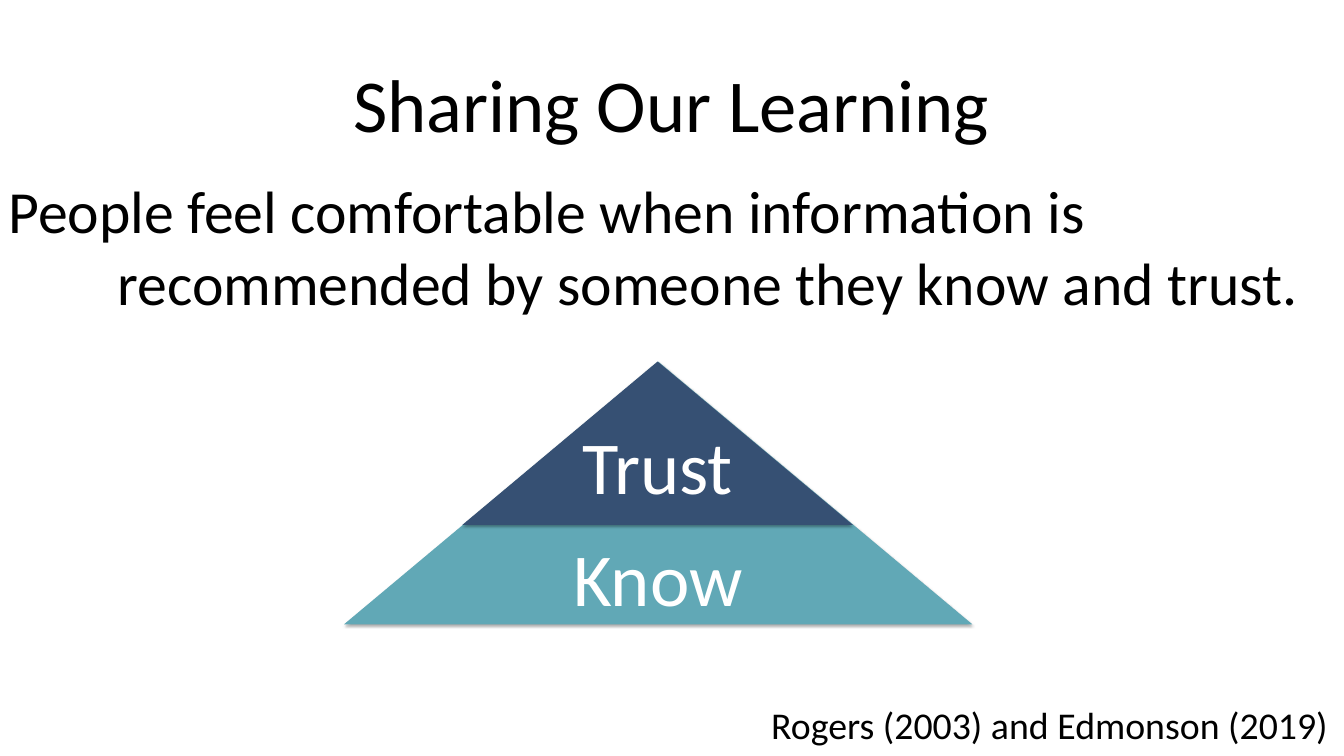
"""Build the slide on sharing our learning, with a two-level pyramid."""
from lxml import etree
from pptx import Presentation
from pptx.dml.color import RGBColor
from pptx.enum.shapes import MSO_SHAPE
from pptx.enum.text import MSO_ANCHOR, PP_ALIGN
from pptx.oxml.ns import qn
from pptx.util import Pt

TRIANGLE = MSO_SHAPE.ISOSCELES_TRIANGLE
LEFT, CENTER = PP_ALIGN.LEFT, PP_ALIGN.CENTER
TOP, MIDDLE = MSO_ANCHOR.TOP, MSO_ANCHOR.MIDDLE
BLACK = RGBColor(0x00, 0x00, 0x00)
WHITE = RGBColor(0xFF, 0xFF, 0xFF)
TEAL = RGBColor(0x61, 0xA8, 0xB6)
NAVY = RGBColor(0x36, 0x50, 0x73)
FONT = "Calibri"


def add_shade(effects, blur, drop, angle, alpha):
    shade = etree.SubElement(
        effects, qn("a:outerShdw"), blurRad=str(Pt(blur)), dist=str(Pt(drop)),
        dir=str(angle * 60000), algn="tl", rotWithShape="0")
    color = etree.SubElement(shade, qn("a:srgbClr"), val=str(BLACK))
    etree.SubElement(color, qn("a:alpha"), val=str(alpha * 1000))


def put_text(shape, text, size, color=BLACK, align=LEFT, anchor=TOP, wrap=True,
             inset=(7.2, 7.2, 7.2, 3.6), hang=0, after=0, shade=False):
    frame = shape.text_frame
    frame.word_wrap = wrap
    frame.vertical_anchor = anchor
    (frame.margin_left, frame.margin_top,
     frame.margin_right, frame.margin_bottom) = map(Pt, inset)
    para = frame.paragraphs[0]
    para.alignment = align
    para.space_after = Pt(after)
    if hang:
        props = para._p.get_or_add_pPr()
        props.set("marL", str(Pt(hang)))
        props.set("indent", str(-Pt(hang)))
    run = para.add_run()
    run.text = text
    run.font.size = Pt(size)
    run.font.color.rgb = color
    if shade:
        effects = etree.SubElement(run.font._element, qn("a:effectLst"))
        add_shade(effects, 4, 3, 45, 45)
    run.font.name = FONT


deck = Presentation()
deck.slide_width, deck.slide_height = Pt(1440), Pt(810)
slide = deck.slides.add_slide(deck.slide_layouts[5])

title = slide.shapes.title
title.left, title.top, title.width, title.height = map(Pt, (260.6, 14.4, 918, 173.5))
put_text(title, "Sharing Our Learning", 80, align=CENTER, anchor=MIDDLE,
         inset=(7.2, 18, 7.2, 0))

source = slide.shapes.add_textbox(Pt(822.2), Pt(746), Pt(625), Pt(56))
put_text(source, "Rogers (2003) and Edmonson (2019)", 40.5, wrap=False,
         inset=(4, 6, 7.2, 3.6))

body = slide.shapes.add_textbox(0, Pt(178.6), Pt(1440), Pt(167))
put_text(body, "People feel comfortable when information is "
         "recommended by someone they know and trust.", 64,
         inset=(9, 8, 7.2, 3.6), hang=117)

group = slide.shapes.add_group_shape()
for left, width, height, color in ((368.6, 673.2, 281.5, TEAL),
                                   (495.4, 418.3, 175, NAVY)):
    level = group.shapes.add_shape(TRIANGLE, Pt(left), Pt(387.4), Pt(width), Pt(height))
    level.fill.solid()
    level.fill.fore_color.rgb = color
    level.line.fill.background()
    level.shadow.inherit = False
    add_shade(level._element.spPr.find(qn("a:effectLst")), 3.1, 1.8, 90, 35)

for word, top in (("Know", 562.3), ("Trust", 442.8)):
    label = group.shapes.add_textbox(Pt(486), Pt(top), Pt(437.8), Pt(113.8))
    put_text(label, word, 80, color=WHITE, align=CENTER, after=12, shade=True)

deck.save("out.pptx")
